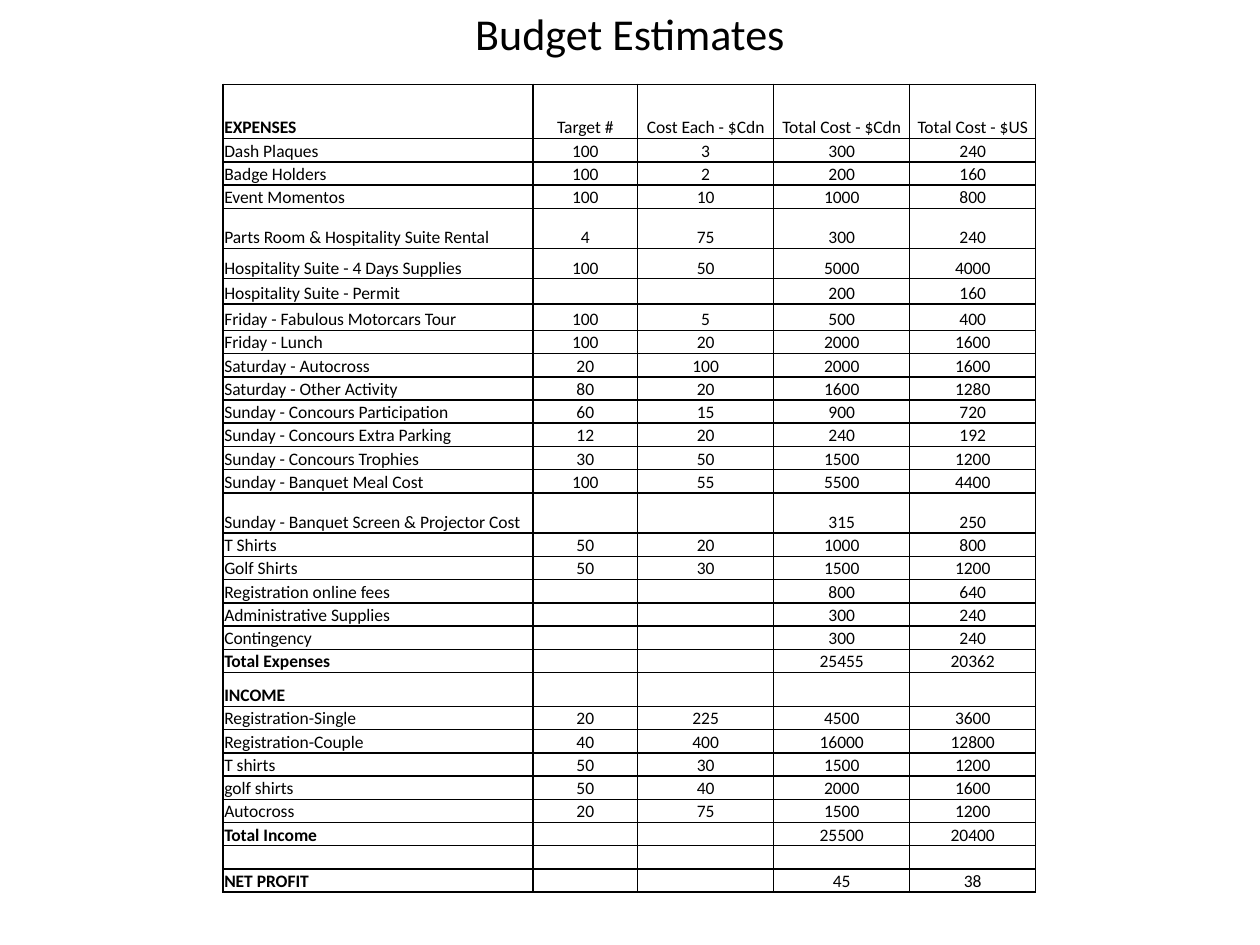
"""Build the budget estimates slide with its expense and income table."""
from lxml import etree
from pptx import Presentation
from pptx import util as u
from pptx.dml.color import RGBColor
from pptx.enum import text
from pptx.oxml.ns import qn

TITLE = "Budget Estimates"
COLORS = {"ink": "000000"}
FONT = "Calibri"
BODY_SIZE = 10

BUDGET = [
    ("EXPENSES", "Target #", "Cost Each - $Cdn", "Total Cost - $Cdn", "Total Cost - $US"),
    ("Dash Plaques", 100, 3, 300, 240),
    ("Badge Holders", 100, 2, 200, 160),
    ("Event Momentos", 100, 10, 1000, 800),
    ("Parts Room & Hospitality Suite Rental", 4, 75, 300, 240),
    ("Hospitality Suite - 4 Days Supplies", 100, 50, 5000, 4000),
    ("Hospitality Suite - Permit", "", "", 200, 160),
    ("Friday - Fabulous Motorcars Tour", 100, 5, 500, 400),
    ("Friday - Lunch", 100, 20, 2000, 1600),
    ("Saturday - Autocross", 20, 100, 2000, 1600),
    ("Saturday - Other Activity", 80, 20, 1600, 1280),
    ("Sunday - Concours Participation", 60, 15, 900, 720),
    ("Sunday - Concours Extra Parking", 12, 20, 240, 192),
    ("Sunday - Concours Trophies", 30, 50, 1500, 1200),
    ("Sunday - Banquet Meal Cost", 100, 55, 5500, 4400),
    ("Sunday - Banquet Screen & Projector Cost", "", "", 315, 250),
    ("T Shirts", 50, 20, 1000, 800),
    ("Golf Shirts", 50, 30, 1500, 1200),
    ("Registration online fees", "", "", 800, 640),
    ("Administrative Supplies", "", "", 300, 240),
    ("Contingency", "", "", 300, 240),
    ("Total Expenses", "", "", 25455, 20362),
    ("INCOME", "", "", "", ""),
    ("Registration-Single", 20, 225, 4500, 3600),
    ("Registration-Couple", 40, 400, 16000, 12800),
    ("T shirts", 50, 30, 1500, 1200),
    ("golf shirts", 50, 40, 2000, 1600),
    ("Autocross", 20, 75, 1500, 1200),
    ("Total Income", "", "", 25500, 20400),
    ("", "", "", "", ""),
    ("NET PROFIT", "", "", 45, 38),
]
BOLD_LABELS = {"EXPENSES", "Total Expenses", "INCOME", "Total Income", "NET PROFIT"}
COLUMN_WIDTHS = [2.46, 0.83, 1.08, 1.08, 1]
TABLE_LEFT, TABLE_TOP, TABLE_HEIGHT = 1.77, 0.67, 6.42
TALL_ROWS = {0: 0.43, 4: 0.32, 5: 0.24, 6: 0.2, 7: 0.21, 15: 0.32, 22: 0.27}


def style_paragraph(paragraph, size, bold, alignment):
    paragraph.alignment = alignment
    paragraph.font.name = FONT
    paragraph.font.size = u.Pt(size)
    paragraph.font.bold = bold
    paragraph.font.color.rgb = RGBColor.from_string(COLORS["ink"])


def add_borders(cell):
    properties = cell._tc.get_or_add_tcPr()
    for side in ("lnL", "lnR", "lnT", "lnB"):
        line = etree.SubElement(properties, qn(f"a:{side}"), w=str(u.Pt(1)))
        fill = etree.SubElement(line, qn("a:solidFill"))
        etree.SubElement(fill, qn("a:srgbClr"), val=COLORS["ink"])


def fill_cell(cell, value, is_label):
    cell.margin_left = cell.margin_right = cell.margin_top = u.Inches(0.01)
    cell.margin_bottom = 0
    cell.vertical_anchor = text.MSO_ANCHOR.BOTTOM
    add_borders(cell)
    cell.fill.background()
    cell.text = str(value)
    paragraph = cell.text_frame.paragraphs[0]
    alignment = text.PP_ALIGN.LEFT if is_label else text.PP_ALIGN.CENTER
    style_paragraph(paragraph, BODY_SIZE, value in BOLD_LABELS, alignment)
    if value == "":
        etree.SubElement(paragraph._p, qn("a:endParaRPr"), sz=str(BODY_SIZE * 100))


def add_title(slide):
    heading = slide.shapes.add_textbox(u.Inches(0.5), 0, u.Inches(9), u.Inches(0.53))
    frame = heading.text_frame
    frame.word_wrap = True
    frame.vertical_anchor = text.MSO_ANCHOR.MIDDLE
    frame.text = TITLE
    style_paragraph(frame.paragraphs[0], 25.2, False, text.PP_ALIGN.CENTER)


def add_budget(slide):
    regular = (TABLE_HEIGHT - sum(TALL_ROWS.values())) / (len(BUDGET) - len(TALL_ROWS))
    budget = slide.shapes.add_table(
        len(BUDGET), len(COLUMN_WIDTHS), u.Inches(TABLE_LEFT), u.Inches(TABLE_TOP),
        u.Inches(sum(COLUMN_WIDTHS)), u.Inches(TABLE_HEIGHT)).table
    budget.first_row = budget.horz_banding = False
    for column, width in zip(budget.columns, COLUMN_WIDTHS):
        column.width = u.Inches(width)
    for r, entries in enumerate(BUDGET):
        budget.rows[r].height = u.Inches(TALL_ROWS.get(r, regular))
        for c, value in enumerate(entries):
            fill_cell(budget.cell(r, c), value, c == 0)


def main():
    deck = Presentation()
    deck.slide_width, deck.slide_height = u.Inches(10), u.Inches(7.5)
    slide = deck.slides.add_slide(deck.slide_layouts[6])
    add_title(slide)
    add_budget(slide)
    deck.save("out.pptx")


if __name__ == "__main__":
    main()
